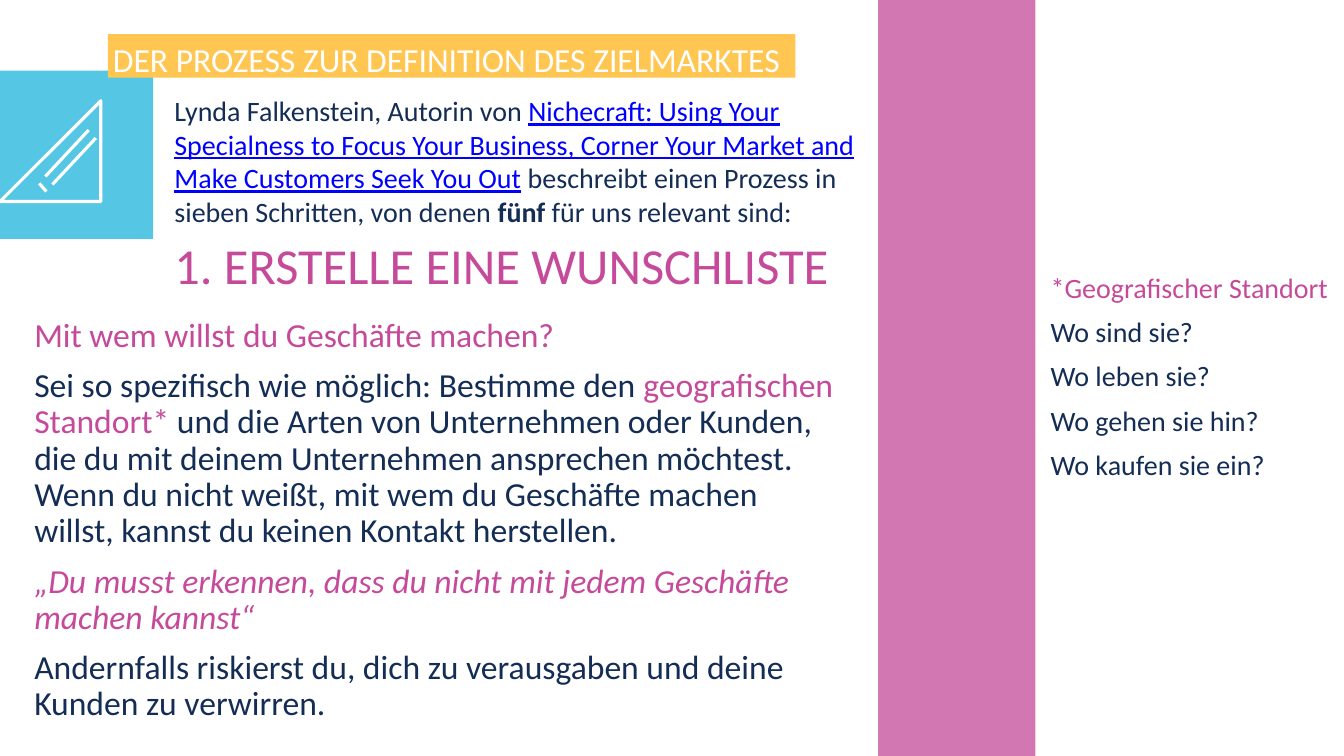
from dataclasses import dataclass
from typing import Optional

from lxml.etree import SubElement
from pptx import Presentation
from pptx.dml.color import RGBColor
from pptx.enum.shapes import MSO_CONNECTOR as Connector, MSO_SHAPE as Shape
from pptx.enum.text import MSO_ANCHOR as Anchor, MSO_AUTO_SIZE as AutoSize, PP_ALIGN as Align
from pptx.oxml.ns import qn
from pptx.util import Inches, Pt

COLORS = {"white": "FFFFFF", "navy": "142D55", "pink": "C54A9A",
          "cyan": "1EB3DD", "yellow": "FFC652", "link": "0000FF"}
FONT = "Calibri"
Point = tuple[float, float]


@dataclass
class Span:
    text: str
    color: str = "navy"
    bold: bool = False
    italic: bool = False
    underline: bool = False


@dataclass
class Block:
    left: float
    top: float
    width: float
    height: float
    fill: str
    opacity: int = 100


@dataclass
class TextArea:
    left: float
    top: float
    width: float
    height: float
    size: int
    paras: list[list[Span]]
    spacing: Optional[float] = None
    anchor: Anchor = Anchor.TOP
    grow: bool = False


@dataclass
class Outline:
    points: list[Point]
    closed: bool = False


def rgb(name: str) -> RGBColor:
    return RGBColor.from_string(COLORS[name])


def write_text(frame, size: int, paras: list[list[Span]], spacing: Optional[float] = None) -> None:
    frame.word_wrap = True
    frame.margin_left = frame.margin_right = Inches(0.05)
    frame.margin_top = frame.margin_bottom = Inches(0.05)
    for index, spans in enumerate(paras):
        para = frame.add_paragraph() if index else frame.paragraphs[0]
        para.alignment = Align.LEFT
        if spacing:
            para.line_spacing = spacing
        if index:
            para.space_before = Pt(10)
        for span in spans:
            run = para.add_run()
            run.text = span.text
            font = run.font
            font.name, font.size = FONT, Pt(size)
            font.color.rgb = rgb(span.color)
            font.bold, font.italic, font.underline = span.bold, span.italic, span.underline


def draw_block(page, block: Block):
    shape = page.shapes.add_shape(Shape.RECTANGLE, Inches(block.left), Inches(block.top),
                                  Inches(block.width), Inches(block.height))
    shape.shadow.inherit = False
    shape.fill.solid()
    shape.fill.fore_color.rgb = rgb(block.fill)
    shape.line.fill.background()
    if block.opacity < 100:
        color = shape.fill._xPr.find(qn("a:solidFill"))[0]
        SubElement(color, qn("a:alpha")).set("val", str(block.opacity * 1000))
    return shape


def draw_text(page, area: TextArea) -> None:
    box = page.shapes.add_textbox(Inches(area.left), Inches(area.top),
                                  Inches(area.width), Inches(area.height))
    frame = box.text_frame
    write_text(frame, area.size, area.paras, area.spacing)
    frame.vertical_anchor = area.anchor
    frame.auto_size = AutoSize.SHAPE_TO_FIT_TEXT if area.grow else AutoSize.NONE


def stroke(shape) -> None:
    shape.line.color.rgb = rgb("white")
    shape.line.width = Pt(2.25)


def draw_pencil(page, outlines: list[Outline], strokes: list[tuple[Point, Point]]) -> None:
    icon = page.shapes.add_group_shape()
    for outline in outlines:
        builder = icon.shapes.build_freeform(*outline.points[0], scale=Inches(1))
        builder.add_line_segments(outline.points[1:], close=outline.closed)
        shape = builder.convert_to_shape()
        shape.shadow.inherit = False
        shape.fill.background()
        stroke(shape)
    for start, end in strokes:
        line = icon.shapes.add_connector(Connector.STRAIGHT, *map(Inches, start + end))
        stroke(line)
        SubElement(line._element.spPr, qn("a:effectLst"))


# Coloured blocks
ICON_TILE = Block(-0.04, 0.7, 1.56, 1.67, "cyan", 75)
SIDE_BAND = Block(8.71, 0, 1.56, 7.5, "pink", 75)
TITLE_BAR = Block(1.07, 0.34, 6.82, 0.43, "yellow")
TITLE = "DER PROZESS ZUR DEFINITION DES ZIELMARKTES"

# Pencil icon
PENCIL_OUTLINES = [
    Outline([(1.07, 1.31), (0.93, 1.16), (0.92, 1.15), (0.91, 1.15), (0.9, 1.16), (0.83, 1.23),
             (1, 1.42), (1.07, 1.35), (1.08, 1.33), (1.07, 1.32)], closed=True),
    Outline([(0.83, 1.24), (0.4, 1.7), (0.39, 1.71), (0.37, 1.89), (0.37, 1.9), (0.38, 1.91),
             (0.4, 1.91), (0.56, 1.89), (0.57, 1.88), (1, 1.42)]),
    Outline([(0.4, 1.7), (0.57, 1.88)]),
]
PENCIL_STROKES = [((0.95, 1.37), (0.52, 1.83)), ((0.45, 1.75), (0.88, 1.29)),
                  ((0.46, 1.9), (0.39, 1.82))]

# Texts
HEADING = TextArea(1.68, 2.36, 6.93, 0.64, 36, [[Span("1. ERSTELLE EINE WUNSCHLISTE", "pink")]],
                   spacing=0.8, anchor=Anchor.MIDDLE)
BODY = TextArea(0.29, 3.11, 8.13, 4.2, 24, [
    [Span("Mit wem willst du Geschäfte machen?", "pink")],
    [Span("Sei so spezifisch wie möglich: Bestimme den "),
     Span("geografischen Standort*", "pink"),
     Span(" und die Arten von Unternehmen oder Kunden, die du mit deinem Unternehmen ansprechen "
          "möchtest. Wenn du nicht weißt, mit wem du Geschäfte machen willst, kannst du keinen "
          "Kontakt herstellen.")],
    [Span("„Du musst erkennen, dass du nicht mit jedem Geschäfte machen kannst“", "pink",
          italic=True)],
    [Span("Andernfalls riskierst du, dich zu verausgaben und deine Kunden zu verwirren.")],
], spacing=0.9)
QUESTIONS = ["Wo sind sie?", "Wo leben sie?", "Wo gehen sie hin?", "Wo kaufen sie ein?"]
LOCATION = TextArea(10.37, 2.67, 2.97, 2.18, 20,
                    [[Span("*Geografischer Standort", "pink")]]
                    + [[Span(question)] for question in QUESTIONS],
                    spacing=0.9, grow=True)
INTRO = TextArea(1.68, 0.88, 6.93, 1.37, 20, [[
    Span("Lynda Falkenstein, Autorin von "),
    Span("Nichecraft: Using Your Specialness to Focus Your Business, Corner Your Market and "
         "Make Customers Seek You Out", "link", underline=True),
    Span(" beschreibt einen Prozess in sieben Schritten, von denen "),
    Span("fünf", bold=True),
    Span(" für uns relevant sind:"),
]], grow=True)


def main() -> None:
    deck = Presentation()
    deck.slide_width, deck.slide_height = Inches(13.33), Inches(7.5)
    page = deck.slides.add_slide(deck.slide_layouts[6])

    for block in (ICON_TILE, SIDE_BAND):
        draw_block(page, block)
    draw_pencil(page, PENCIL_OUTLINES, PENCIL_STROKES)
    for area in (HEADING, BODY, LOCATION):
        draw_text(page, area)

    # Title bar and introduction
    title_bar = draw_block(page, TITLE_BAR)
    write_text(title_bar.text_frame, 24, [[Span(TITLE, "white")]])
    title_bar.text_frame.vertical_anchor = Anchor.TOP
    draw_text(page, INTRO)

    deck.save("out.pptx")


if __name__ == "__main__":
    main()
